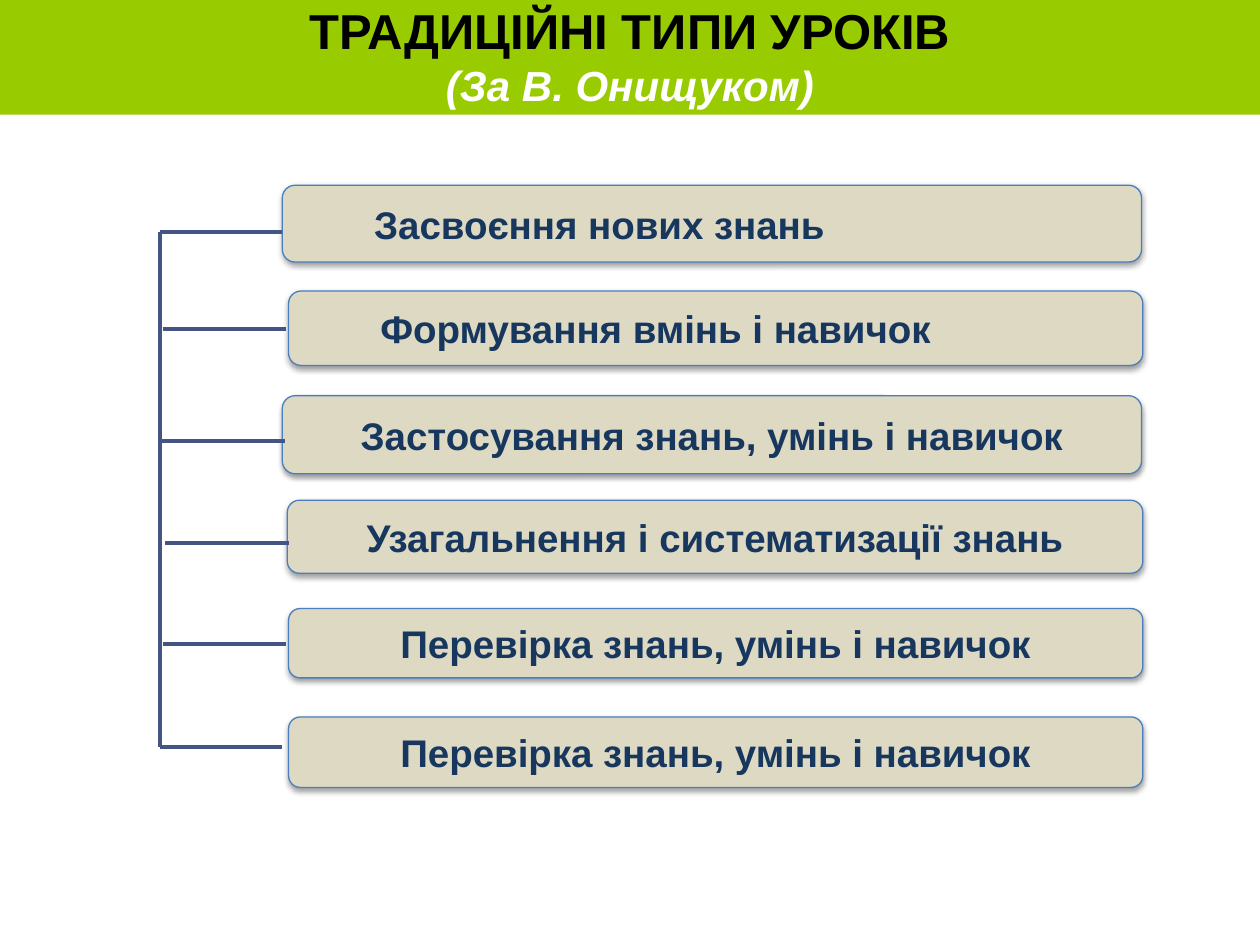
import pptx
import pptx.dml.color
import pptx.enum.shapes
import pptx.enum.text
import pptx.oxml
import pptx.util
from pptx.oxml.ns import nsdecls

Inches, Pt = pptx.util.Inches, pptx.util.Pt
Shape = pptx.enum.shapes.MSO_SHAPE
Align = pptx.enum.text.PP_ALIGN

FONT = "Arial"
GREEN, BEIGE, EDGE = "99CC00", "DDD9C3", "4B7EBC"
NAVY, TREE = "17375E", "445583"
TRUNK = 1.27
INDENT = 0.7

# text, size, colour, italic
TITLE = [
    ("ТРАДИЦІЙНІ ТИПИ УРОКІВ", 28, "000000", False),
    ("(За В. Онищуком)", 24, "FFFFFF", True),
]

# text, indented, box (left, top, width, height), branch (start, end, y)
TYPES = [
    ("Засвоєння нових знань", True, (2.24, 1.47, 6.82, 0.61), (TRUNK, 2.24, 1.84)),
    ("Формування вмінь і навичок", True, (2.29, 2.31, 6.78, 0.59), (1.29, 2.27, 2.61)),
    ("Застосування знань, умінь і навичок", False, (2.24, 3.14, 6.82, 0.62), (1.28, 2.26, 3.5)),
    ("Узагальнення і систематизації знань", False, (2.28, 3.97, 6.79, 0.58), (1.31, 2.29, 4.31)),
    ("Перевірка знань, умінь і навичок", False, (2.29, 4.83, 6.78, 0.55), (1.29, 2.27, 5.11)),
    ("Перевірка знань, умінь і навичок", False, (2.29, 5.69, 6.78, 0.56), (TRUNK, 2.24, 5.93)),
]

SHADOW = (
    f'<a:outerShdw {nsdecls("a")} blurRad="40000" dist="20000" dir="5400000"'
    ' rotWithShape="0"><a:srgbClr val="000000"><a:alpha val="38000"/>'
    "</a:srgbClr></a:outerShdw>"
)


def rgb(code):
    return pptx.dml.color.RGBColor.from_string(code)


def block(slide, kind, place, fill):
    """Add a filled shape without line or shadow, its text centred in height."""
    shape = slide.shapes.add_shape(kind, *map(Inches, place))
    shape.shadow.inherit = False
    shape.fill.solid()
    shape.fill.fore_color.rgb = rgb(fill)
    shape.line.fill.background()
    shape.text_frame.word_wrap = True
    shape.text_frame.vertical_anchor = pptx.enum.text.MSO_ANCHOR.MIDDLE
    return shape


def write(para, text, size, color, italic=False, align=Align.CENTER):
    para.alignment = align
    run = para.add_run()
    run.text = text
    font = run.font
    font.name, font.size = FONT, Pt(size)
    font.bold, font.italic = True, italic
    font.color.rgb = rgb(color)


def rule(slide, *ends):
    """Draw a tree line through x1, y1, x2, y2."""
    line = slide.shapes.add_connector(
        pptx.enum.shapes.MSO_CONNECTOR.STRAIGHT, *map(Inches, ends))
    line.line.color.rgb = rgb(TREE)
    line.line.width = Pt(2.25)
    line._element.spPr.append(
        pptx.oxml.parse_xml(f'<a:effectLst {nsdecls("a")}/>'))


def card(slide, text, indented, place):
    box = block(slide, Shape.ROUNDED_RECTANGLE, place, BEIGE)
    box.line.color.rgb = rgb(EDGE)
    box.line.width = Pt(0.75)
    effects = box._element.spPr.find(pptx.oxml.ns.qn("a:effectLst"))
    effects.append(pptx.oxml.parse_xml(SHADOW))
    if indented:
        box.text_frame.margin_left = Inches(INDENT)
    write(box.text_frame.paragraphs[0], text, 22, NAVY,
          align=Align.LEFT if indented else Align.CENTER)


def main():
    deck = pptx.Presentation()
    deck.slide_width, deck.slide_height = Inches(10), Inches(7.5)
    slide = deck.slides.add_slide(deck.slide_layouts[6])

    for text, indented, place, _ in TYPES:
        card(slide, text, indented, place)

    levels = [branch[2] for *_, branch in TYPES]
    rule(slide, TRUNK, levels[0], TRUNK, levels[-1])
    for *_, (start, end, y) in TYPES:
        rule(slide, start, y, end, y)

    frame = block(slide, Shape.RECTANGLE, (0, -0.04, 10, 0.95), GREEN).text_frame
    for i, part in enumerate(TITLE):
        write(frame.add_paragraph() if i else frame.paragraphs[0], *part)

    deck.save("out.pptx")


if __name__ == "__main__":
    main()
